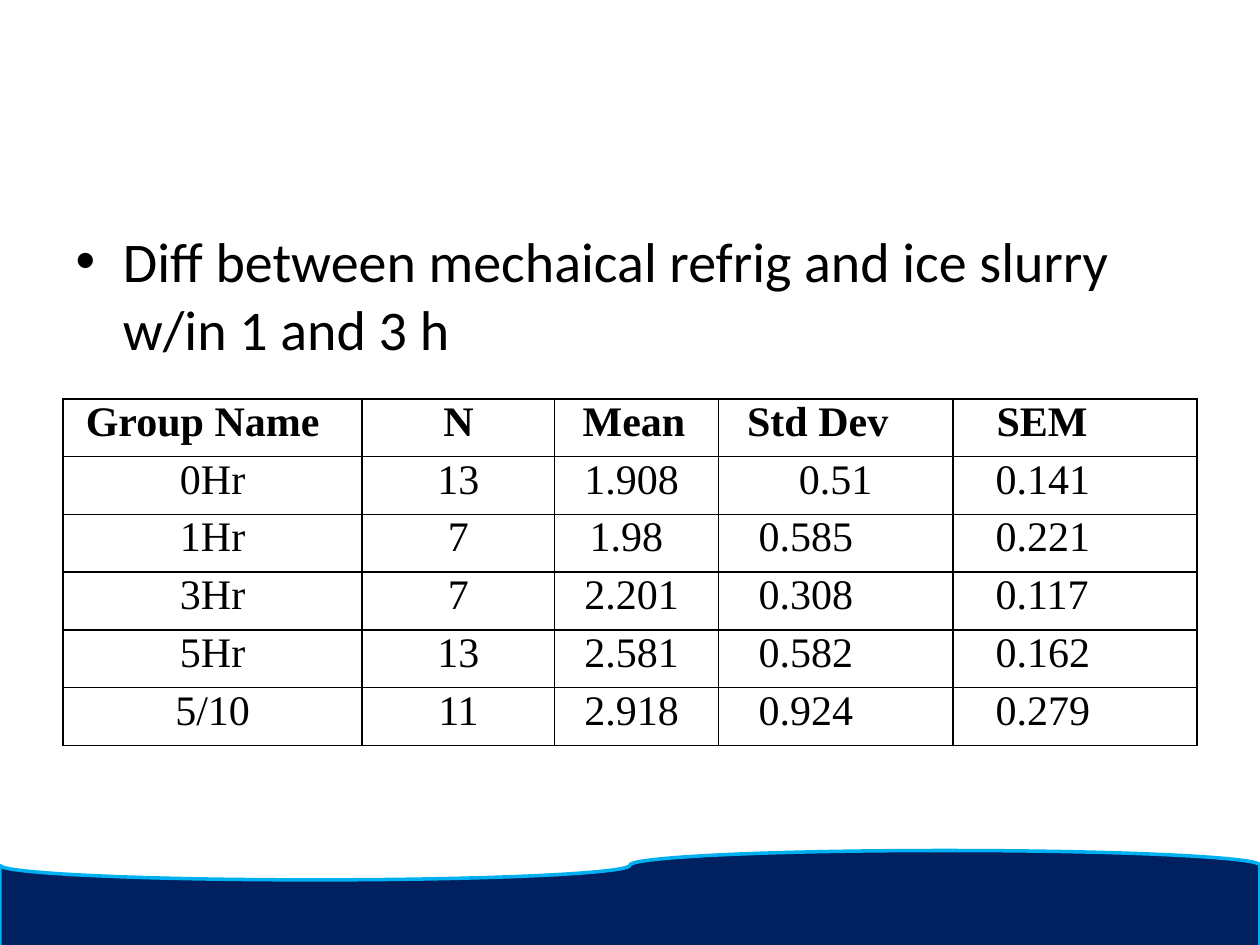
from lxml import etree
from pptx import Presentation
from pptx.dml.color import RGBColor
from pptx.enum import shapes, text
from pptx.oxml.ns import qn
from pptx.util import Pt

HUES = {"ink": "000000", "navy": "002060", "sky": "00B0F0"}
COLS = [171, 110, 93.5, 134, 139.5]
ROW = 33
HEAD = ["Group Name", "N", "Mean", "Std Dev", "SEM"]
DATA = [
    ["0Hr", "13", "1.908", "0.51", "0.141"],
    ["1Hr", "7", "1.98", "0.585", "0.221"],
    ["3Hr", "7", "2.201", "0.308", "0.117"],
    ["5Hr", "13", "2.581", "0.582", "0.162"],
    ["5/10", "11", "2.918", "0.924", "0.279"],
]
# Left indents by column; None means centred
HEAD_PADS = [13, None, 16, 16.5, 25]
DATA_PADS = [None, None, 17, 23, 24.5]
ODD_PADS = {"1.98": 20, "0.51": None}


def rgb(name):
    return RGBColor.from_string(HUES[name])


def write(frame, words, font="Calibri", size=32, bold=False, pad=0, hang=0,
          align=text.PP_ALIGN.LEFT, bullet=None):
    para = frame.paragraphs[0]
    para.text = words
    para.alignment = align
    para.space_before = Pt(0)
    props = para._p.get_or_add_pPr()
    props.set("marL", str(Pt(pad)))
    props.set("indent", str(Pt(hang)))
    if bullet:
        etree.SubElement(props, qn("a:buFont")).set("typeface", "Arial")
        etree.SubElement(props, qn("a:buChar")).set("char", bullet)
    face = para.runs[0].font
    face.name, face.size, face.bold = font, Pt(size), bold
    face.color.rgb = rgb("ink")


class Page:
    def __init__(self, deck):
        self.slide = deck.slides.add_slide(deck.slide_layouts[1])
        self.font = "Times New Roman"
        self.size = 24

    def wave(self, x, y, w, h):
        shape = self.slide.shapes.add_shape(
            shapes.MSO_SHAPE.FLOWCHART_PUNCHED_TAPE, Pt(x), Pt(y), Pt(w), Pt(h))
        shape.shadow.inherit = False
        shape.fill.solid()
        shape.fill.fore_color.rgb = rgb("navy")
        shape.line.color.rgb = rgb("sky")
        shape.line.width = Pt(2)
        # Behind everything else
        self.slide.shapes._spTree.insert(2, shape._element)

    def body(self, words, x, y, w, h):
        title = self.slide.shapes.title._element
        title.getparent().remove(title)
        box = self.slide.placeholders[1]
        box.left, box.top, box.width, box.height = Pt(x), Pt(y), Pt(w), Pt(h)
        write(box.text_frame, words, pad=27, hang=-27, bullet="•")

    def frame(self, cell):
        props = cell._tc.get_or_add_tcPr()
        for i, side in enumerate(("lnL", "lnR", "lnT", "lnB")):
            line = etree.Element(qn("a:" + side), w=str(Pt(1)))
            fill = etree.SubElement(line, qn("a:solidFill"))
            etree.SubElement(fill, qn("a:srgbClr")).set("val", HUES["ink"])
            props.insert(i, line)

    def table(self, rows, x, y):
        grid = self.slide.shapes.add_table(
            len(rows), len(COLS), Pt(x), Pt(y), Pt(sum(COLS)),
            Pt(ROW * len(rows))).table
        grid.horz_banding = False
        for col, width in zip(grid.columns, COLS):
            col.width = Pt(width)
        for r, row in enumerate(rows):
            grid.rows[r].height = Pt(ROW)
            pads = DATA_PADS if r else HEAD_PADS
            for c, words in enumerate(row):
                cell = grid.cell(r, c)
                cell.margin_left = cell.margin_right = Pt(0)
                cell.margin_top = cell.margin_bottom = Pt(0)
                cell.fill.background()
                pad = ODD_PADS.get(words, pads[c])
                align = text.PP_ALIGN.CENTER if pad is None else text.PP_ALIGN.LEFT
                write(cell.text_frame, words, font=self.font, size=self.size,
                      bold=r == 0, pad=pad or 0, align=align)
                self.frame(cell)


def main():
    deck = Presentation()
    deck.slide_width, deck.slide_height = Pt(720), Pt(540)
    page = Page(deck)
    # Footer wave
    page.wave(0, 486, 720, 84)
    # Finding
    page.body("Diff between mechaical refrig and ice slurry w/in 1 and 3 h",
              36, 126, 648, 356.5)
    # Group statistics
    page.table([HEAD] + DATA, 36, 228)
    deck.save("out.pptx")


if __name__ == "__main__":
    main()
